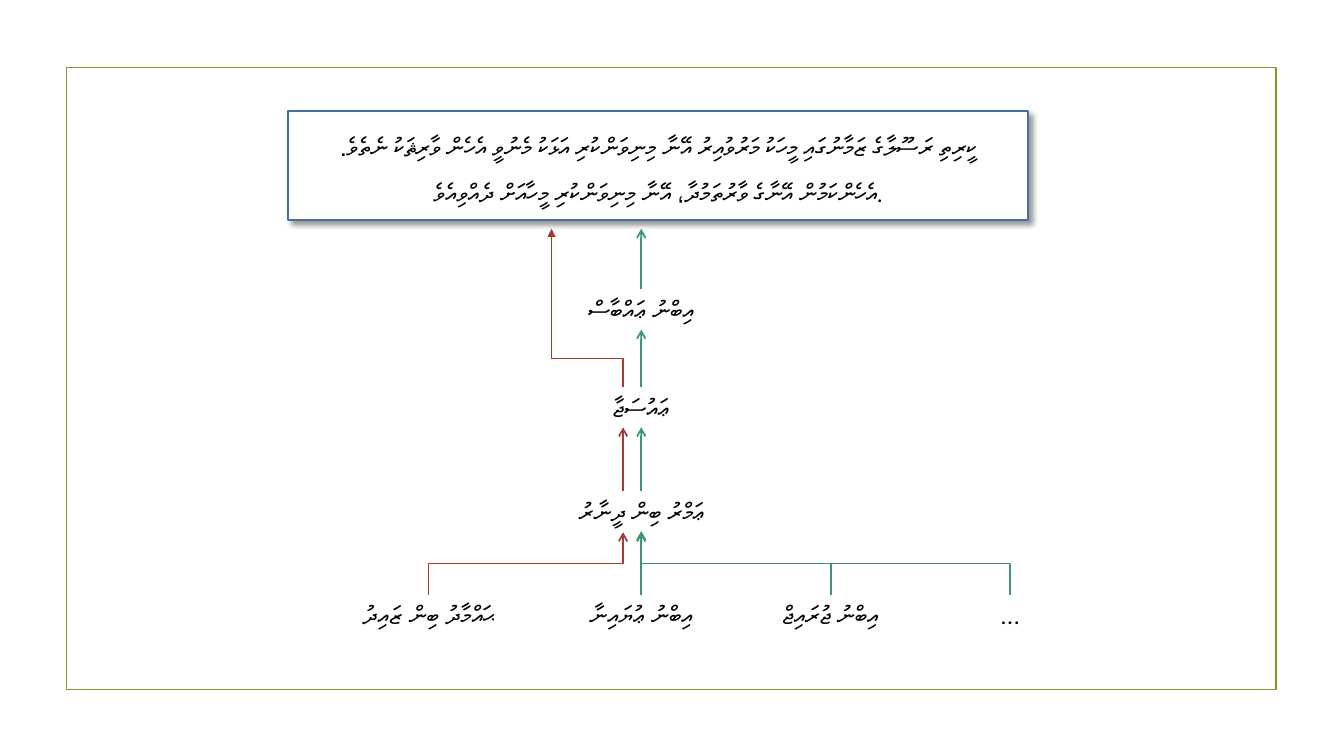
import pptx
import pptx.dml.color
import pptx.enum.shapes
import pptx.enum.text
import pptx.oxml
import pptx.oxml.ns
import pptx.util
from dataclasses import dataclass

Inches = pptx.util.Inches
Pt = pptx.util.Pt
RGB = pptx.dml.color.RGBColor.from_string
qn = pptx.oxml.ns.qn
RECT = pptx.enum.shapes.MSO_SHAPE.RECTANGLE
LINK = pptx.enum.shapes.MSO_CONNECTOR


@dataclass
class Theme:
    font: str = "Roboto"
    size: float = 18
    line: float = 1.25
    text: str = "000000"
    paper: str = "FFFFFF"
    frame: str = "83992A"
    box: str = "44709D"
    green: str = "3C9770"
    red: str = "A23C33"


theme = Theme()


def write(sp, text):
    """Put one centred run of text into a shape."""
    tf = sp.text_frame
    tf.word_wrap = True
    tf.auto_size = pptx.enum.text.MSO_AUTO_SIZE.SHAPE_TO_FIT_TEXT
    p = tf.paragraphs[0]
    p.alignment = pptx.enum.text.PP_ALIGN.CENTER
    r = p.add_run()
    r.text = text
    r.font.name = theme.font
    r.font.size = Pt(theme.size)
    r.font.color.rgb = RGB(theme.text)
    return p


def arrow(kind, x1, y1, x2, y2, color, head="arrow"):
    c = s.shapes.add_connector(kind, Inches(x1), Inches(y1), Inches(x2), Inches(y2))
    c.line.color.rgb = RGB(color)
    c.line.width = Pt(theme.line)
    ln = c.line._get_or_add_ln()
    ln.append(pptx.oxml.parse_xml(f'<a:tailEnd {pptx.oxml.ns.nsdecls("a")} type="{head}"/>'))
    c._element.spPr.append(pptx.oxml.parse_xml(f'<a:effectLst {pptx.oxml.ns.nsdecls("a")}/>'))
    return c


prs = pptx.Presentation()
prs.slide_width = Inches(13.33)
prs.slide_height = Inches(7.5)
s = prs.slides.add_slide(prs.slide_layouts[6])

frame = s.shapes.add_shape(RECT, Inches(0.66), Inches(0.67), Inches(12), Inches(6.17))
frame.shadow.inherit = False
frame.fill.background()
frame.line.color.rgb = RGB(theme.frame)
frame.line.width = Pt(theme.line)

# Narrators: centre, top, width, name
green_x, red_x = 6.36, 6.18
name_height = 0.4
source_top, arrow_tip = 5.9, 5.28
narrators = [
    (green_x, 2.87, 1.54, "އިބްނު ޢައްބާސް"),
    (green_x, 3.84, 1.54, "ޢައުސަޖާ"),
    (green_x, 4.87, 2.5, "ޢަމްރު ބިން ދީނާރު"),
    (green_x, source_top, 1.54, "އިބްނު ޢުޔައިނާ"),
    (4.25, source_top, 1.85, "ޙައްމާދު ބިން ޒައިދު"),
    (8.24, source_top, 1.54, "އިބްނު ޖުރައިޖް"),
    (10.02, source_top, 1.54, "..."),
]
names = []
for x, top, width, name in narrators:
    sp = s.shapes.add_textbox(Inches(x - width / 2), Inches(top), Inches(width), Inches(name_height))
    write(sp, name)
    names.append(sp)

# Green chain, each narrator to the one above
for i in range(1, 4):
    upper_bottom = narrators[i - 1][1] + name_height
    c = arrow(LINK.STRAIGHT, green_x, narrators[i][1], green_x, upper_bottom, theme.green)
    c.begin_connect(names[i], 0)
    c.end_connect(names[i - 1], 2)
arrow(LINK.STRAIGHT, green_x, 2.87, green_x, 2.27, theme.green)
arrow(LINK.STRAIGHT, red_x, 4.87, red_x, 4.24, theme.red)

# Bent arrows leave upwards: an elbow turned by 270 degrees about its middle
bends = [
    (8.24, source_top, green_x, arrow_tip, theme.green, "arrow", 0.5),
    (10.02, source_top, green_x, arrow_tip, theme.green, "arrow", 0.5),
    (4.25, source_top, red_x, arrow_tip, theme.red, "arrow", 0.5),
    (red_x, 3.84, 5.47, 2.27, theme.red, "triangle", 0.18),
]
for x1, y1, x2, y2, color, head, bend in bends:
    mid_x, mid_y = (x1 + x2) / 2, (y1 + y2) / 2
    half_rise, half_run = (y1 - y2) / 2, (x2 - x1) / 2
    c = arrow(LINK.ELBOW, mid_x - half_rise, mid_y - half_run,
              mid_x + half_rise, mid_y + half_run, color, head)
    spPr = c._element.spPr
    spPr.find(qn("a:xfrm")).set("rot", str(270 * 60000))
    guides = spPr.find(qn("a:prstGeom")).find(qn("a:avLst"))
    guides.append(pptx.oxml.parse_xml(
        f'<a:gd {pptx.oxml.ns.nsdecls("a")} name="adj1" fmla="val {round(bend * 100000)}"/>'))

statement = s.shapes.add_shape(RECT, Inches(2.86), Inches(1.1), Inches(7.34), Inches(1.08))
statement.shadow.inherit = False
statement.fill.solid()
statement.fill.fore_color.rgb = RGB(theme.paper)
statement.line.color.rgb = RGB(theme.box)
statement.line.width = Pt(theme.line)
statement._element.spPr.find(qn("a:effectLst")).append(pptx.oxml.parse_xml(
    f'<a:outerShdw {pptx.oxml.ns.nsdecls("a")} blurRad="{Pt(4)}" dist="{Pt(3)}" '
    f'dir="{45 * 60000}" algn="tl" rotWithShape="0">'
    f'<a:srgbClr val="{theme.text}"><a:alpha val="40000"/></a:srgbClr></a:outerShdw>'))
statement.text_frame.margin_bottom = Inches(0.12)
p = write(statement, "ކީރިތި ރަސޫލާގެ ޒަމާނުގައި މީހަކު މަރުވުއިރު އޭނާ މިނިވަންކުރި އަޅަކު "
          "މެނުވީ އެހެން ވާރިޘަކު ނެތެވެ. އެހެންކަމުން އޭނާގެ ވާރުތަމުދާ، "
          "އޭނާ މިނިވަންކުރި މީހާއަށް ދެއްވިއެވެ.")
p.line_spacing = 1.5

prs.save("out.pptx")
